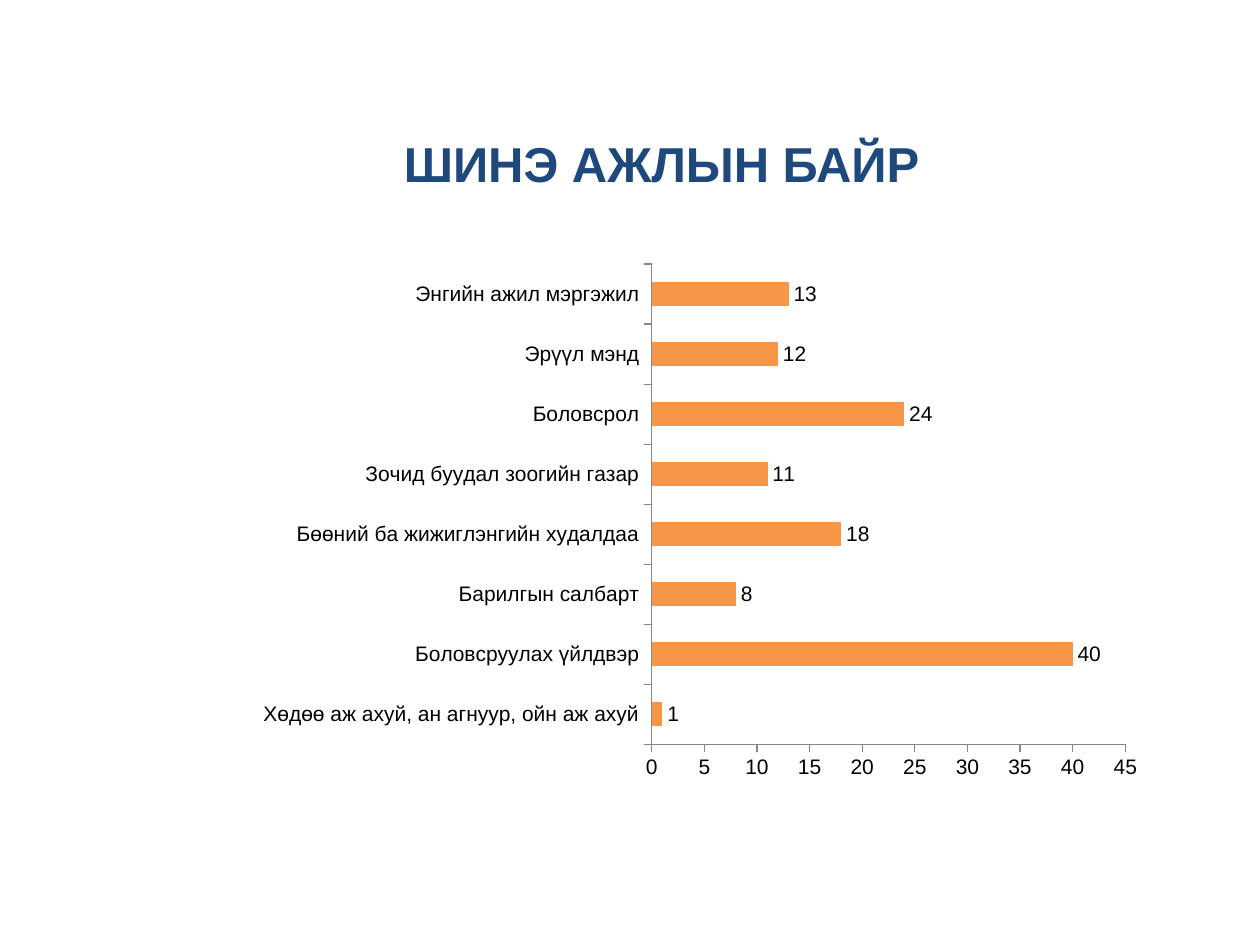
from lxml import etree
from pptx import Presentation
from pptx.chart.data import CategoryChartData
from pptx.dml.color import RGBColor
from pptx.enum import chart as ch, text
from pptx.oxml.ns import qn
from pptx.util import Inches, Pt

TITLE = "ШИНЭ АЖЛЫН БАЙР"
JOBS = [
    ("Хөдөө аж ахуй, ан агнуур, ойн аж ахуй", 1),
    ("Боловсруулах үйлдвэр", 40),
    ("Барилгын салбарт", 8),
    ("Бөөний ба жижиглэнгийн худалдаа", 18),
    ("Зочид буудал зоогийн газар", 11),
    ("Боловсрол", 24),
    ("Эрүүл мэнд", 12),
    ("Энгийн ажил мэргэжил", 13),
]
PLOT_AREA = {"x": 0.49, "y": 0.07, "w": 0.46, "h": 0.77}
FONT = "Arial"
NAVY, ORANGE, GREY, BLACK, WHITE = "1F497D", "F79646", "868686", "000000", "FFFFFF"


def color(value):
    return RGBColor.from_string(value)


def format_font(font, size, fill, bold=False):
    font.name, font.size, font.bold = FONT, Pt(size), bold
    font.color.rgb = color(fill)


def write(shape, words, size, fill, bold=False, align=text.PP_ALIGN.CENTER):
    frame = shape.text_frame
    frame.word_wrap = True
    frame.vertical_anchor = text.MSO_ANCHOR.MIDDLE
    paragraph = frame.paragraphs[0]
    paragraph.alignment = align
    run = paragraph.add_run()
    run.text = words
    format_font(run.font, size, fill, bold)


def set_plot_area(chart, fractions):
    """Fix the inner plot area as fractions of the chart."""
    plot_area = chart._chartSpace.chart.plotArea
    for old in plot_area.findall(qn("c:layout")):
        plot_area.remove(old)
    layout = etree.Element(qn("c:layout"))
    manual = etree.SubElement(layout, qn("c:manualLayout"))
    settings = {"layoutTarget": "inner", "xMode": "edge", "yMode": "edge", **fractions}
    for tag, value in settings.items():
        etree.SubElement(manual, qn(f"c:{tag}")).set("val", str(value))
    plot_area.insert(0, layout)


def add_jobs_chart(slide):
    data = CategoryChartData()
    data.categories = [name for name, _ in JOBS]
    data.add_series("Series 1", [count for _, count in JOBS])
    chart = slide.shapes.add_chart(
        ch.XL_CHART_TYPE.BAR_CLUSTERED,
        Inches(1.17), Inches(1.75), Inches(8.17), Inches(4.95), data,
    ).chart
    chart.has_legend = False
    chart.has_title = False
    format_font(chart.font, 12, BLACK)
    set_plot_area(chart, PLOT_AREA)

    for axis in (chart.category_axis, chart.value_axis):
        axis.has_major_gridlines = False
        axis.major_tick_mark = ch.XL_TICK_MARK.OUTSIDE
        axis.minor_tick_mark = ch.XL_TICK_MARK.NONE
        axis.format.line.color.rgb = color(GREY)
        axis.format.line.width = Pt(0.75)
    chart.value_axis.minimum_scale = 0
    chart.value_axis.maximum_scale = 45
    chart.value_axis.major_unit = 5

    plot = chart.plots[0]
    plot.gap_width = 150
    plot.vary_by_categories = False
    fill = plot.series[0].format.fill
    fill.solid()
    fill.fore_color.rgb = color(ORANGE)
    plot.has_data_labels = True
    labels = plot.data_labels
    labels.show_value = True
    labels.position = ch.XL_LABEL_POSITION.OUTSIDE_END
    format_font(labels.font, 12, BLACK)


def main():
    presentation = Presentation()
    presentation.slide_width, presentation.slide_height = Inches(10), Inches(7.5)
    slide = presentation.slides.add_slide(presentation.slide_layouts[5])
    slide.background.fill.solid()
    slide.background.fill.fore_color.rgb = color(WHITE)

    title = slide.shapes.title
    title.left, title.top = Inches(1), Inches(0.92)
    title.width, title.height = Inches(8.5), Inches(0.75)
    write(title, TITLE, 28, NAVY, bold=True)
    add_jobs_chart(slide)
    presentation.save("out.pptx")


if __name__ == "__main__":
    main()
